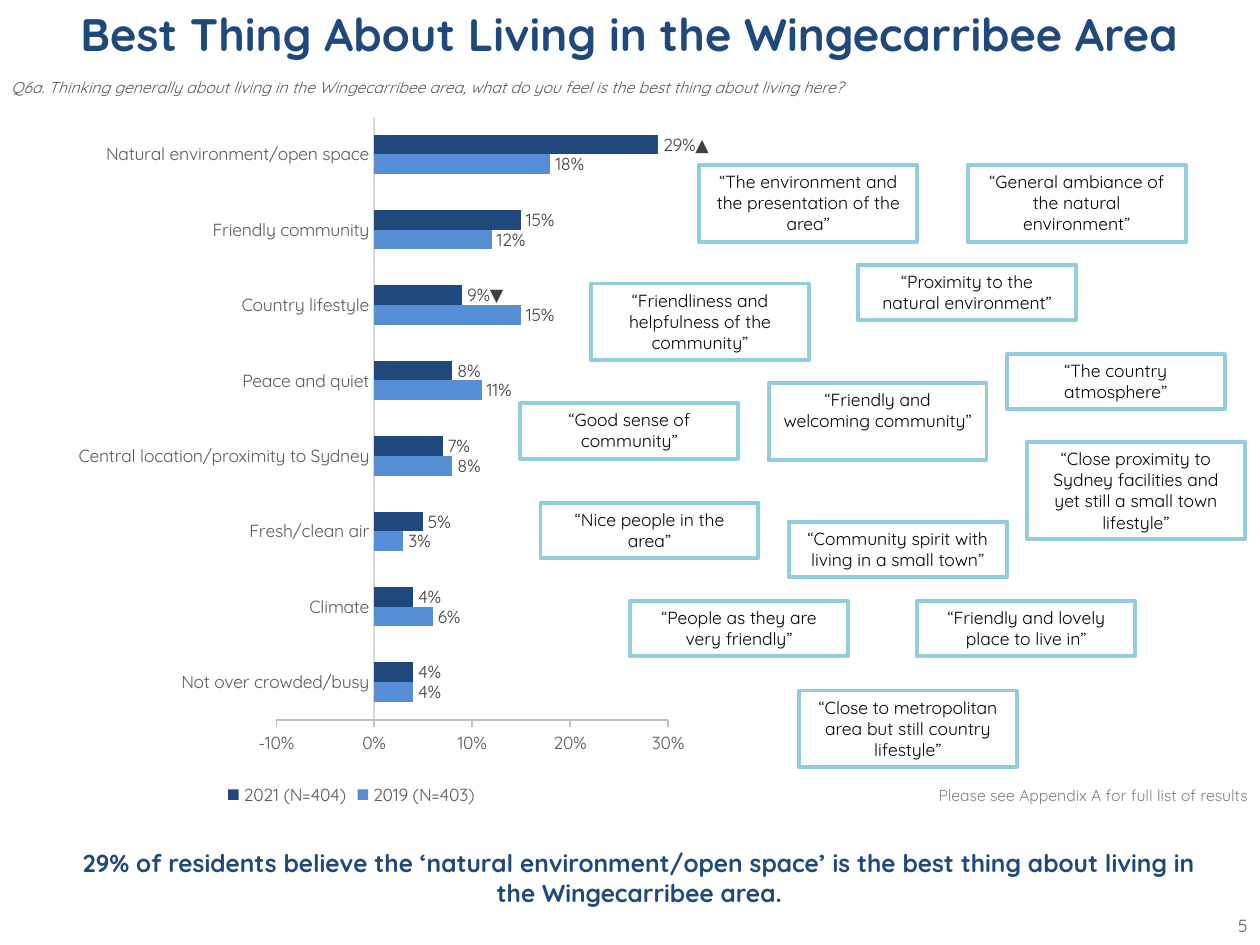
from lxml import etree
from pptx import Presentation
from pptx.chart import data as chart_data
from pptx.dml.color import RGBColor
from pptx.enum import chart as ch, shapes, text
from pptx.oxml import parse_xml
from pptx.util import Inches, Pt

FONT = "Quicksand"
COLORS = {
    "navy": "1F497D", "blue": "558ED5", "aqua": "93CDDD", "black": "000000",
    "label": "404040", "grey": "595959", "note": "808080",
    "axis": "BFBFBF", "divider": "D9D9D9",
}
LEFT, CENTER, RIGHT = text.PP_ALIGN.LEFT, text.PP_ALIGN.CENTER, text.PP_ALIGN.RIGHT
TOP, MIDDLE = text.MSO_ANCHOR.TOP, text.MSO_ANCHOR.MIDDLE

CAPTIONS = [
    ("Best Thing About Living in the Wingecarribee Area",
     (0, 0, 10, 0.55), 26, "navy", CENTER, TOP, True, False),
    ("Q6a. Thinking generally about living in the Wingecarribee area, "
     "what do you feel is the best thing about living here?",
     (-0.01, 0.57, 10, 0.24), 9, "grey", LEFT, MIDDLE, False, True),
    ("29% of residents believe the ‘natural environment/open space’ is "
     "the best thing about living in the Wingecarribee area.",
     (0.51, 6.43, 9.13, 1.07), 14, "navy", CENTER, MIDDLE, True, False),
    ("Please see Appendix A for full list of results",
     (7.28, 6.19, 2.72, 0.25), 9, "note", RIGHT, TOP, False, False),
    ("5", (9.57, 7.21, 0.43, 0.27), 10, "grey", RIGHT, TOP, False, False),
]

REASONS = [
    ("Not over crowded/busy", 0.04, 0.04),
    ("Climate", 0.06, 0.04),
    ("Fresh/clean air", 0.03, 0.05),
    ("Central location/proximity to Sydney", 0.08, 0.07),
    ("Peace and quiet", 0.11, 0.08),
    ("Country lifestyle", 0.15, 0.09),
    ("Friendly community", 0.12, 0.15),
    ("Natural environment/open space", 0.18, 0.29),
]
YEARS = [("2019 (N=403)", "blue"), ("2021 (N=404)", "navy")]
CHANGES = {5: "9%▼", 7: "29%▲"}

QUOTE_WIDTH = 1.73
QUOTE_HEIGHTS = {2: 0.44, 3: 0.61, 4: 0.77}
QUOTES = [
    ("“The environment and the presentation of the area”", 5.55, 1.31, 3),
    ("“General ambiance of the natural environment”", 7.68, 1.31, 3),
    ("“Proximity to the natural environment”", 6.81, 2.1, 2),
    ("“Friendliness and helpfulness of the community”", 4.69, 2.25, 3),
    ("“Friendly and welcoming community”", 6.1, 3.04, 3),
    ("“Good sense of community”", 4.13, 3.2, 2),
    ("“Nice people in the area”", 4.29, 3.99, 2),
    ("“Community spirit with living in a small town”", 6.26, 4.14, 2),
    ("“People as they are very friendly”", 5, 4.77, 2),
    ("“Friendly and lovely place to live in”", 7.28, 4.77, 2),
    ("“The country atmosphere”", 7.99, 2.81, 2),
    ("“Close to metropolitan area but still country lifestyle”", 6.34, 5.48, 3),
    ("“Close proximity to Sydney facilities and yet still a small town lifestyle”",
     8.15, 3.51, 4),
]


def color(name):
    return RGBColor.from_string(COLORS[name])


def style(font, size, tint, bold=False, italic=False):
    font.name, font.size, font.bold, font.italic = FONT, Pt(size), bold, italic
    font.color.rgb = color(tint)


def write(frame, words, size, tint, align, anchor, bold=False, italic=False):
    frame.word_wrap = True
    frame.vertical_anchor = anchor
    paragraph = frame.paragraphs[0]
    paragraph.alignment = align
    run = paragraph.add_run()
    run.text = words
    style(run.font, size, tint, bold, italic)


def add_caption(slide, words, place, *look):
    caption = slide.shapes.add_textbox(*map(Inches, place))
    write(caption.text_frame, words, *look)


def add_quote(slide, words, left, top, lines):
    quote = slide.shapes.add_shape(
        shapes.MSO_SHAPE.RECTANGLE,
        *map(Inches, (left, top, QUOTE_WIDTH, QUOTE_HEIGHTS[lines])))
    quote.shadow.inherit = False
    quote.fill.background()
    quote.line.color.rgb = color("aqua")
    quote.line.width = Pt(2.25)
    write(quote.text_frame, words, 10, "black", CENTER, TOP)


def set_plot_area(chart, x, y, w, h):
    ns = "http://schemas.openxmlformats.org/drawingml/2006/chart"
    area = chart._chartSpace.chart.plotArea
    for old in area.findall(f"{{{ns}}}layout"):
        area.remove(old)
    layout = parse_xml(f'<c:layout xmlns:c="{ns}"><c:manualLayout/></c:layout>')
    settings = [("layoutTarget", "inner"), ("xMode", "edge"), ("yMode", "edge"),
                ("x", x), ("y", y), ("w", w), ("h", h)]
    for tag, value in settings:
        etree.SubElement(layout[0], f"{{{ns}}}{tag}").set("val", str(value))
    area.insert(0, layout)


def style_axis(axis, tick, line):
    axis.has_major_gridlines = False
    axis.major_tick_mark = tick
    axis.minor_tick_mark = ch.XL_TICK_MARK.NONE
    axis.format.line.color.rgb = color(line)
    axis.format.line.width = Pt(0.75)
    style(axis.tick_labels.font, 10, "grey")


def add_reasons_chart(slide):
    names, *shares = zip(*REASONS)
    results = chart_data.CategoryChartData(number_format="0%")
    results.categories = names
    for (year, _), values in zip(YEARS, shares):
        results.add_series(year, values)
    chart = slide.shapes.add_chart(
        ch.XL_CHART_TYPE.BAR_CLUSTERED,
        *map(Inches, (-0.2, 0.92, 5.98, 5.51)), results).chart
    style(chart.font, 10, "grey")
    chart.has_title = False
    chart.has_legend = True
    chart.legend.position = ch.XL_LEGEND_POSITION.BOTTOM
    chart.legend.include_in_layout = False
    style(chart.legend.font, 10, "grey")
    set_plot_area(chart, 0.4, 0, 0.52, 0.87)

    style_axis(chart.category_axis, ch.XL_TICK_MARK.NONE, "divider")
    scale = chart.value_axis
    style_axis(scale, ch.XL_TICK_MARK.OUTSIDE, "axis")
    scale.minimum_scale, scale.maximum_scale, scale.major_unit = -0.1, 0.3, 0.1
    scale.tick_labels.number_format = "0%"
    scale.tick_labels.number_format_is_linked = False

    bars = chart.plots[0]
    bars.gap_width = 182
    bars.vary_by_categories = False
    for series, (_, tint) in zip(bars.series, YEARS):
        series.format.fill.solid()
        series.format.fill.fore_color.rgb = color(tint)
        labels = series.data_labels
        labels.show_value = True
        labels.position = ch.XL_LABEL_POSITION.OUTSIDE_END
        labels.number_format = "0%"
        labels.number_format_is_linked = False
        style(labels.font, 10, "label")
    for index, words in CHANGES.items():
        label = bars.series[1].points[index].data_label
        run = label.text_frame.paragraphs[0].add_run()
        run.text = words
        style(run.font, 10, "label")
        label.position = ch.XL_LABEL_POSITION.OUTSIDE_END


def main():
    deck = Presentation()
    deck.slide_width, deck.slide_height = Inches(10), Inches(7.5)
    slide = deck.slides.add_slide(deck.slide_layouts[6])
    for caption in CAPTIONS:
        add_caption(slide, *caption)
    add_reasons_chart(slide)
    for quote in QUOTES:
        add_quote(slide, *quote)
    deck.save("out.pptx")


if __name__ == "__main__":
    main()
